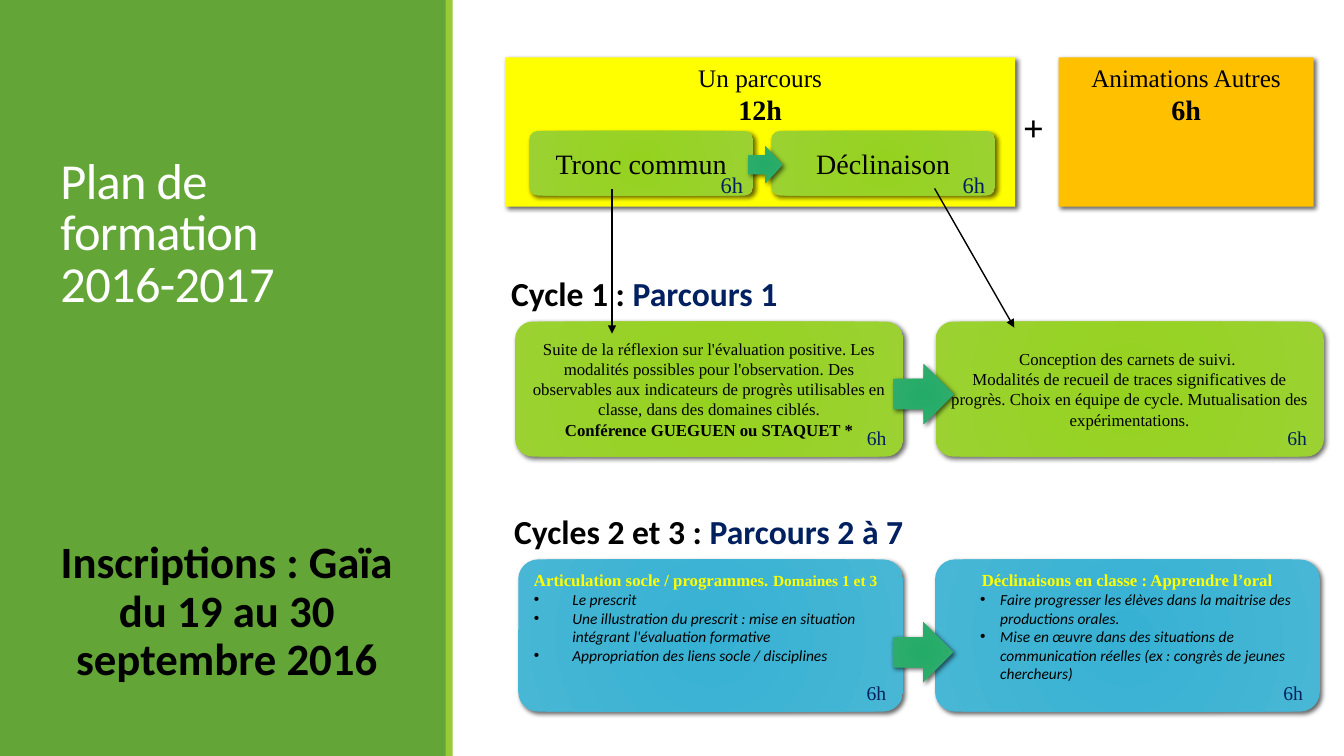
from lxml import etree
from pptx import Presentation
from pptx.dml.color import RGBColor
from pptx.enum.shapes import MSO_CONNECTOR, MSO_SHAPE
from pptx.enum.text import MSO_ANCHOR, MSO_AUTO_SIZE, PP_ALIGN
from pptx.oxml.ns import qn
from pptx.util import Inches, Pt

RECT = MSO_SHAPE.RECTANGLE
ROUND = MSO_SHAPE.ROUNDED_RECTANGLE
ARROW = MSO_SHAPE.RIGHT_ARROW
LINE = MSO_CONNECTOR.STRAIGHT
LEFT, MID = PP_ALIGN.LEFT, PP_ALIGN.CENTER
TOP, CENTER, BOTTOM = MSO_ANCHOR.TOP, MSO_ANCHOR.MIDDLE, MSO_ANCHOR.BOTTOM
SERIF, SANS = "Times New Roman", "Calibri"
HEX = {
    "panel": "63A537", "stripe": "99CB38", "white": "FFFFFF", "black": "000000",
    "navy": "002060", "yellow": "FFFF00", "orange": "FFC000",
    "lime": "95D220", "lime2": "9BD231", "blue": "37B1D3", "blue2": "48B7D5",
    "green": "24AB67", "green2": "31AD6F",
}


def rgb(name):
    return RGBColor.from_string(HEX[name])


def node(parent, tag, **attrs):
    return etree.SubElement(parent, qn(tag), attrs)


def run(par, text, size, color="black", font=SERIF, bold=False, slant=False):
    part = par.add_run()
    part.text = text
    face = part.font
    face.name, face.size, face.bold, face.italic = font, Pt(size), bold, slant
    face.color.rgb = rgb(color)
    return part


def write(frame, pars, anchor=TOP):
    frame.word_wrap = True
    frame.vertical_anchor = anchor
    for i, (align, indent, runs) in enumerate(pars):
        par = frame.paragraphs[0] if i == 0 else frame.add_paragraph()
        par.alignment = align
        for text, *style in runs:
            run(par, text, *style)
        if indent:
            left, hang = indent
            props = par._p.get_or_add_pPr()
            props.set("marL", str(Inches(left)))
            props.set("indent", str(-Inches(hang)))
            node(props, "a:buFont", typeface="Arial")
            node(props, "a:buChar", char="•")


def block(slide, kind, box, fill, shade=True):
    shape = slide.shapes.add_shape(kind, *map(Inches, box))
    if fill + "2" in HEX:
        shape.fill.gradient()
        for stop, name in zip(shape.fill.gradient_stops, (fill, fill + "2")):
            stop.color.rgb = rgb(name)
        grad = shape._element.spPr.find(qn("a:gradFill"))
        grad.remove(grad.find(qn("a:lin")))
        ring = etree.Element(qn("a:path"), {"path": "circle"})
        grad.find(qn("a:gsLst")).addnext(ring)
        node(ring, "a:fillToRect", l="100000", t="100000", r="100000", b="100000")
    else:
        shape.fill.solid()
        shape.fill.fore_color.rgb = rgb(fill)
    shape.line.fill.background()
    shape.shadow.inherit = False
    if kind == ROUND:
        shape.adjustments[0] = 0.13
    if shade:
        effect = shape._element.spPr.find(qn("a:effectLst"))
        cast = node(effect, "a:outerShdw", blurRad=str(Pt(3.5)), dist=str(Pt(2)),
                    dir="2700000", algn="tl", rotWithShape="0")
        tint = node(cast, "a:srgbClr", val=HEX["black"])
        node(tint, "a:alpha", val="60000")
    return shape


def label(slide, box, pars):
    area = slide.shapes.add_textbox(*map(Inches, box))
    write(area.text_frame, pars)


def mark(slide, x, y, size):
    label(slide, (x, y, 0.5, 0.35), [(LEFT, None, [("6h", size, "navy")])])


def link(slide, x1, y1, x2, y2):
    line = slide.shapes.add_connector(LINE, *map(Inches, (x1, y1, x2, y2)))
    line.line.color.rgb = rgb("black")
    line.line.width = Pt(1)
    node(line.line._get_or_add_ln(), "a:tailEnd", type="triangle")
    node(line._element.spPr, "a:effectLst")


def place(shape, box):
    shape.left, shape.top, shape.width, shape.height = map(Inches, box)
    shape.text_frame.auto_size = MSO_AUTO_SIZE.NONE


def side(slide, x, y, w, h):
    panel = block(slide, RECT, (x, y, w, h), "panel", False)
    stripe = block(slide, RECT, (x + w - 0.01, y, 0.07, h), "stripe", False)
    for i, back in enumerate((panel, stripe)):
        slide.shapes._spTree.insert(2 + i, back._element)

    title = slide.shapes.title
    place(title, (x + 0.5, y + 0.65, 3.5, 2.5))
    write(title.text_frame, [(LEFT, None, [])], BOTTOM)
    par = title.text_frame.paragraphs[0]
    par.line_spacing = 0.85
    for i, text in enumerate(("Plan de formation ", "2016-2017")):
        if i:
            par.add_line_break()
        part = run(par, text, 36, "white", SANS)
        part._r.get_or_add_rPr().set("spc", "-50")

    body = slide.placeholders[1]
    place(body, (x + 0.5, y + 3.2, 3.5, 3.65))
    text = "Inscriptions : Gaïa du 19 au 30 septembre 2016"
    write(body.text_frame, [(MID, None, [(text, 32, "black", SANS, True)])], BOTTOM)
    par = body.text_frame.paragraphs[0]
    par.line_spacing, par.space_after = 0.9, Pt(2)
    props = par._p.get_or_add_pPr()
    props.set("marL", "0")
    props.set("indent", "0")
    node(props, "a:buNone")


def plan(slide, x, y, w, h):
    wide, slim = 5.06, 2.53
    for left, span, fill, name, hours in (
        (x + w - slim, slim, "orange", "Animations Autres", "6h"),
        (x, wide, "yellow", "Un parcours", "12h"),
    ):
        shape = block(slide, RECT, (left, y, span, h), fill)
        write(shape.text_frame, [
            (MID, None, [(name, 18)]),
            (MID, None, [(hours, 20, "black", SERIF, True)]),
        ])
    label(slide, (x + wide - 0.11, y + 0.42, 0.58, 0.52),
          [(MID, None, [("+", 26, "black", SERIF, True)])])
    for i, name in enumerate(("Tronc commun", "Déclinaison")):
        left = x + 0.24 + 2.4 * i
        chip = block(slide, ROUND, (left, y + 0.73, 2.22, 0.64), "lime")
        write(chip.text_frame, [(MID, None, [(name, 20)])], CENTER)
        mark(slide, left + 1.8, y + 1.08, 16)
    block(slide, ARROW, (x + 2.41, y + 0.88, 0.34, 0.37), "green")


def cycle(slide, x, y, w, h, fill, head, cards, anchor, drop):
    span = w * 0.48
    for left, pars in zip((x, x + w - span), cards):
        card = block(slide, ROUND, (left, y, span, h), fill)
        write(card.text_frame, pars, anchor)
        mark(slide, left + span - 0.46, y + h - 0.35, 14)
    block(slide, ARROW, (x + w / 2 - 0.26, y + drop, 0.6, 0.6), "green")
    name, course = head
    label(slide, (x - 0.14, y - 0.53, w, 0.5), [(LEFT, None, [
        (name, 24, "black", SANS, True), (course, 24, "navy", SANS, True)])])


def points(indent, texts):
    return [(LEFT, indent, [(text, 11, "black", SANS, False, True)]) for text in texts]


def main():
    deck = Presentation()
    deck.slide_width, deck.slide_height = Inches(13.33), Inches(7.5)
    slide = deck.slides.add_slide(deck.slide_layouts[1])
    side(slide, 0, 0, 4.43, 7.5)
    plan(slide, 5.01, 0.57, 8.02, 1.48)
    first = [
        [(MID, None, [("Suite de la réflexion sur l'évaluation positive. Les modalités possibles pour l'observation. Des observables aux indicateurs de progrès utilisables en classe, dans des domaines ciblés.", 12)]),
         (MID, None, [("Conférence GUEGUEN ou STAQUET *", 12, "black", SERIF, True)])],
        [(MID, None, [("Conception des carnets de suivi. ", 12)]),
         (MID, None, [("Modalités de recueil de traces significatives de progrès. Choix en équipe de cycle. Mutualisation des expérimentations.", 12)])],
    ]
    cycle(slide, 5.11, 3.19, 8.02, 1.34, "lime", ("Cycle 1 : ", "Parcours 1"),
          first, CENTER, 0.42)
    later = [
        [(LEFT, None, [("Articulation socle / programmes. ", 12, "yellow", SERIF, True),
                       ("Domaines 1 et 3", 11, "yellow", SERIF, True)])]
        + points((0.38, 0.38), (
            "Le prescrit",
            "Une illustration du prescrit : mise en situation intégrant l'évaluation formative",
            "Appropriation des liens socle / disciplines")),
        [(MID, None, [("Déclinaisons en classe : Apprendre l’oral", 12, "yellow", SERIF, True)])]
        + points((0.49, 0.2), (
            "Faire progresser les élèves dans la maitrise des productions orales.",
            "Mise en œuvre dans des situations de communication réelles (ex : congrès de jeunes chercheurs)")),
    ]
    cycle(slide, 5.14, 5.55, 7.95, 1.51, "blue", ("Cycles 2 et 3 : ", "Parcours 2 à 7"),
          later, TOP, 0.62)
    link(slide, 6.07, 1.88, 6.07, 3.31)
    link(slide, 9.27, 1.87, 10.06, 3.25)
    deck.save("out.pptx")


if __name__ == "__main__":
    main()
